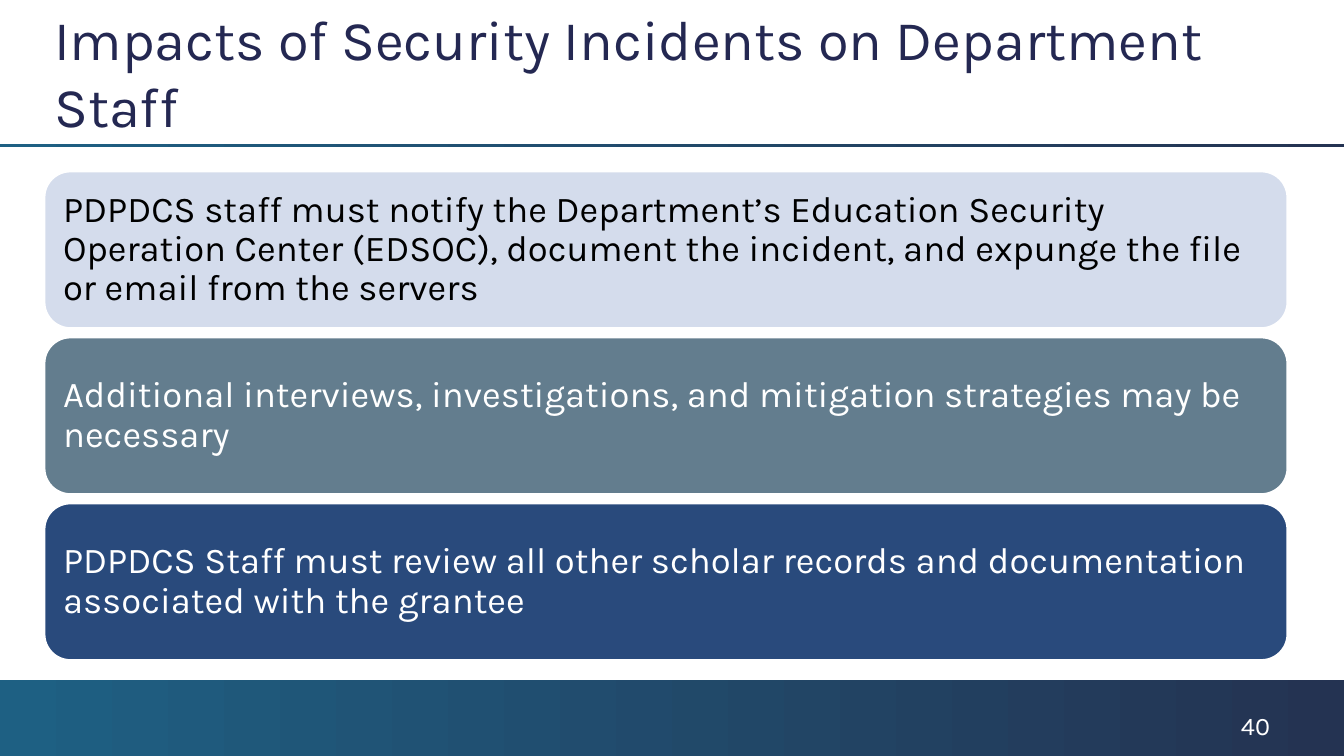
from pptx import Presentation
from pptx.dml.color import RGBColor
from pptx.enum import shapes, text
from pptx.util import Inches, Pt

FONT = "Karla"
WHITE = RGBColor(0xFF, 0xFF, 0xFF)
BLACK = RGBColor(0x00, 0x00, 0x00)
NAVY = RGBColor(0x24, 0x28, 0x52)
TEAL = RGBColor(0x1E, 0x60, 0x83)
MIDNIGHT = RGBColor(0x24, 0x33, 0x52)
PALE_BLUE = RGBColor(0xD4, 0xDC, 0xEC)
SLATE = RGBColor(0x63, 0x7D, 0x8E)
BLUE = RGBColor(0x29, 0x4A, 0x7C)

IMPACTS = [
    ("PDPDCS staff must notify the Department’s Education Security Operation "
     "Center (EDSOC), document the incident, and expunge the file or email "
     "from the servers", PALE_BLUE, BLACK),
    ("Additional interviews, investigations, and mitigation strategies may be "
     "necessary", SLATE, WHITE),
    ("PDPDCS Staff must review all other scholar records and documentation "
     "associated with the grantee", BLUE, WHITE),
]


def write(frame, words, *, size, color, anchor=text.MSO_ANCHOR.TOP,
          spacing=1.0, insets=(0.1, 0.05)):
    frame.word_wrap = True
    frame.vertical_anchor = anchor
    frame.margin_left = frame.margin_right = Inches(insets[0])
    frame.margin_top = frame.margin_bottom = Inches(insets[1])
    paragraph = frame.paragraphs[0]
    paragraph.alignment = text.PP_ALIGN.LEFT
    paragraph.line_spacing = spacing
    run = paragraph.add_run()
    run.text = words
    run.font.name = FONT
    run.font.size = Pt(size)
    run.font.color.rgb = color


def add_text(slide, box, words, **style):
    holder = slide.shapes.add_textbox(*map(Inches, box))
    write(holder.text_frame, words, **style)


def add_band(slide, box):
    band = slide.shapes.add_shape(shapes.MSO_SHAPE.RECTANGLE, *map(Inches, box))
    band.shadow.inherit = False
    band.line.fill.background()
    band.fill.gradient()
    band.fill.gradient_angle = 0
    for stop, color, position in zip(band.fill.gradient_stops,
                                     (TEAL, MIDNIGHT), (0, 1)):
        stop.color.rgb = color
        stop.position = position


def add_header(slide, box):
    left, top, width, height = box
    add_text(slide, (left + 0.44, top + 0.17, width - 1, 1.08),
             "Impacts of Security Incidents on Department Staff",
             size=40, color=NAVY, anchor=text.MSO_ANCHOR.MIDDLE)
    add_band(slide, (left, top + height - 0.03, width, 0.03))


def add_impacts(slide, box, gap=0.09):
    left, top, width, height = box
    card_height = (height - gap * (len(IMPACTS) - 1)) / len(IMPACTS)
    for row, (words, fill, ink) in enumerate(IMPACTS):
        card = slide.shapes.add_shape(
            shapes.MSO_SHAPE.ROUNDED_RECTANGLE, Inches(left),
            Inches(top + row * (card_height + gap)),
            Inches(width), Inches(card_height))
        card.shadow.inherit = False
        card.fill.solid()
        card.fill.fore_color.rgb = fill
        card.line.color.rgb = WHITE
        card.line.width = Pt(1.5)
        write(card.text_frame, words, size=26, color=ink, spacing=0.9,
              anchor=text.MSO_ANCHOR.MIDDLE, insets=(0.11, 0.11))


def add_footer(slide, box):
    left, top, width, height = box
    add_band(slide, box)
    add_text(slide, (left + width - 1.12, top + 0.25, 0.78, 0.27), "40",
             size=18, color=WHITE)


def main():
    deck = Presentation()
    deck.slide_width, deck.slide_height = Inches(13.33), Inches(7.5)
    slide = deck.slides.add_slide(deck.slide_layouts[6])
    add_header(slide, (0, 0, 13.33, 1.46))
    add_impacts(slide, (0.44, 1.7, 12.33, 4.85))
    add_footer(slide, (0, 6.75, 13.33, 0.75))
    deck.save("out.pptx")


if __name__ == "__main__":
    main()
